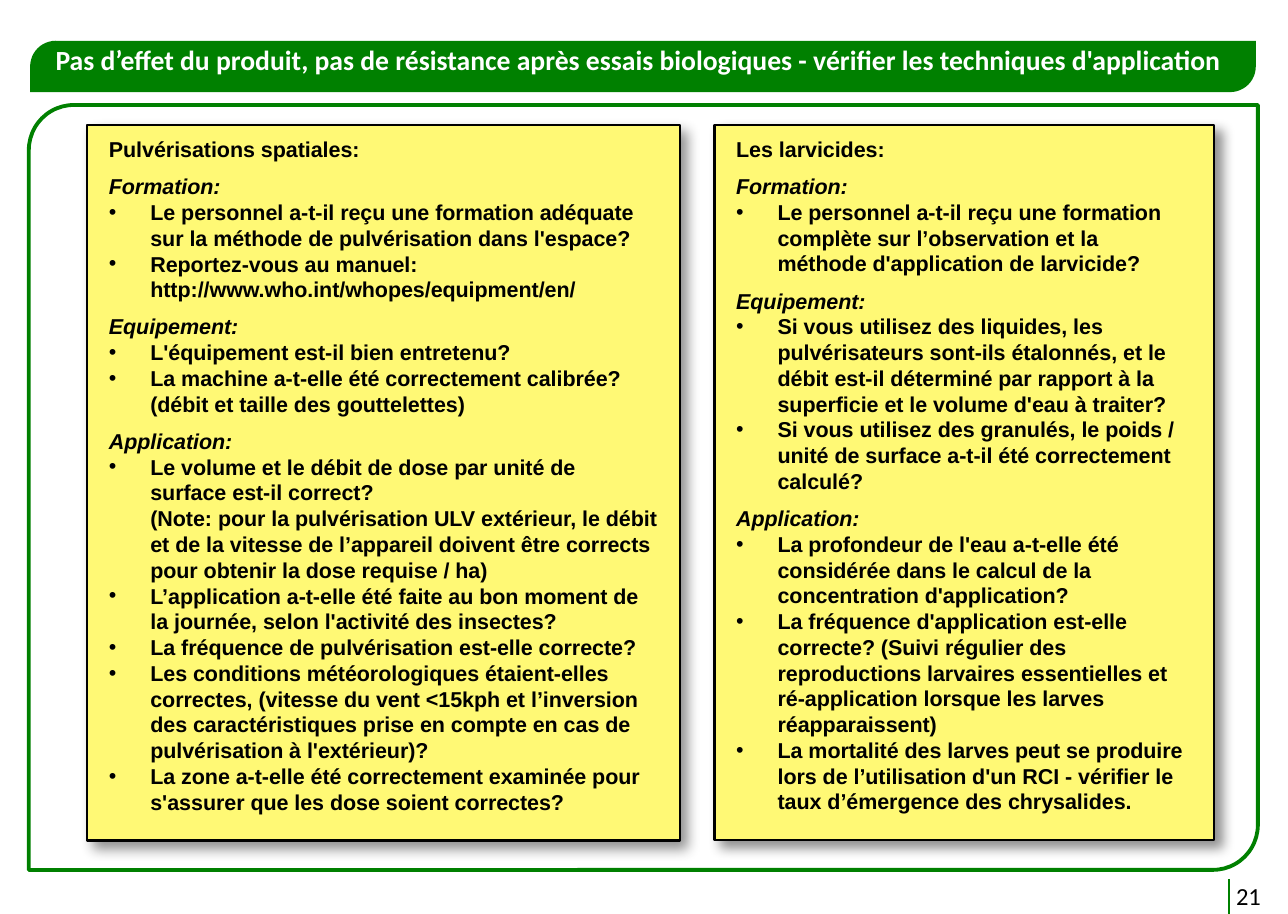
from dataclasses import dataclass

import lxml.etree
import pptx
import pptx.dml.color
import pptx.enum.shapes
import pptx.enum.text
import pptx.oxml
import pptx.oxml.ns
import pptx.util

Pt = pptx.util.Pt
Shapes = pptx.enum.shapes.MSO_SHAPE
qn = pptx.oxml.ns.qn


def rgb(code):
    return pptx.dml.color.RGBColor.from_string(code)


@dataclass(frozen=True)
class Theme:
    green = rgb("008000")
    yellow = rgb("FFF975")
    black = rgb("000000")
    white = rgb("FFFFFF")
    heading_font = "Calibri"
    body_font = "Arial"
    title_size = Pt(9)
    body_size = Pt(7)
    number_size = Pt(8)
    thin = Pt(0.75)
    thick = Pt(1.25)
    section_gap = Pt(3.7)
    bullet_indent = Pt(13.5)


THEME = Theme()

TITLE = "Pas d’effet du produit, pas de résistance après essais biologiques - vérifier les techniques d'application"

SPRAYING = ("Pulvérisations spatiales:", {
    "Formation:": [
        "Le personnel a-t-il reçu une formation adéquate sur la méthode de pulvérisation dans l'espace?",
        "Reportez-vous au manuel:\vhttp://www.who.int/whopes/equipment/en/",
    ],
    "Equipement:": [
        "L'équipement est-il bien entretenu?",
        "La machine a-t-elle été correctement calibrée? (débit et taille des gouttelettes)",
    ],
    "Application:": [
        "Le volume et le débit de dose par unité de\vsurface est-il correct?\v"
        "(Note: pour la pulvérisation ULV extérieur, le débit et de la vitesse de l’appareil "
        "doivent être corrects pour obtenir la dose requise / ha)",
        "L’application a-t-elle été faite au bon moment de la journée, selon l'activité des insectes?",
        "La fréquence de pulvérisation est-elle correcte?",
        "Les conditions météorologiques étaient-elles correctes, (vitesse du vent <15kph et l’inversion "
        "des caractéristiques prise en compte en cas de pulvérisation à l'extérieur)?",
        "La zone a-t-elle été correctement examinée pour s'assurer que les dose soient correctes?",
    ],
})

LARVICIDES = ("Les larvicides:", {
    "Formation:": [
        "Le personnel a-t-il reçu une formation complète sur l’observation et la méthode "
        "d'application de larvicide?",
    ],
    "Equipement:": [
        "Si vous utilisez des liquides, les pulvérisateurs sont-ils étalonnés, et le débit est-il "
        "déterminé par rapport à la superficie et le volume d'eau à traiter?",
        "Si vous utilisez des granulés, le poids / unité de surface a-t-il été correctement calculé?",
    ],
    "Application:": [
        "La profondeur de l'eau a-t-elle été considérée dans le calcul de la concentration d'application?",
        "La fréquence d'application est-elle correcte? (Suivi régulier des reproductions larvaires "
        "essentielles et ré-application lorsque les larves réapparaissent)",
        "La mortalité des larves peut se produire lors de l’utilisation d'un RCI - vérifier le taux "
        "d’émergence des chrysalides.",
    ],
})


def add_block(slide, kind, left, top, width, height, fill=None, line=None, weight=None):
    """Add a flat preset shape with optional fill and outline."""
    block = slide.shapes.add_shape(kind, Pt(left), Pt(top), Pt(width), Pt(height))
    block.shadow.inherit = False
    if fill is None:
        block.fill.background()
    else:
        block.fill.solid()
        block.fill.fore_color.rgb = fill
    if line is None:
        block.line.fill.background()
    else:
        block.line.color.rgb = line
        block.line.width = weight
    return block


def add_rounded(slide, left, top, width, height, rounding, **paint):
    block = add_block(slide, Shapes.ROUND_2_DIAG_RECTANGLE, left, top, width, height, **paint)
    block.adjustments[0] = rounding
    block.adjustments[1] = 0


def cast_shadow(block):
    effects = block._element.spPr.find(qn("a:effectLst"))
    shadow = lxml.etree.SubElement(
        effects, qn("a:outerShdw"), blurRad=str(Pt(4)), dist=str(Pt(3)),
        dir="2700000", algn="tl", rotWithShape="0")
    color = lxml.etree.SubElement(shadow, qn("a:srgbClr"), val=str(THEME.black))
    lxml.etree.SubElement(color, qn("a:alpha"), val="43000")


def style(paragraph, font, size, color, bold=False, italic=False):
    paragraph.font.name = font
    paragraph.font.size = size
    paragraph.font.color.rgb = color
    paragraph.font.bold = bold
    paragraph.font.italic = italic


def add_bullet(paragraph):
    properties = paragraph._p.get_or_add_pPr()
    properties.set("marL", str(THEME.bullet_indent))
    properties.set("indent", str(-THEME.bullet_indent))
    lxml.etree.SubElement(properties, qn("a:buFont"), typeface=THEME.body_font)
    lxml.etree.SubElement(properties, qn("a:buChar"), char="•")


def add_checklist(slide, checklist, left, top, width, height):
    heading, sections = checklist
    panel = add_block(slide, Shapes.RECTANGLE, left, top, width, height,
                      fill=THEME.yellow, line=THEME.black, weight=THEME.thin)
    cast_shadow(panel)
    frame = panel.text_frame
    frame.word_wrap = True
    frame.vertical_anchor = pptx.enum.text.MSO_ANCHOR.TOP

    def write(paragraph, text, italic=False):
        paragraph.text = text
        paragraph.alignment = pptx.enum.text.PP_ALIGN.LEFT
        style(paragraph, THEME.body_font, THEME.body_size, THEME.black, bold=True, italic=italic)

    write(frame.paragraphs[0], heading)
    for section, questions in sections.items():
        label = frame.add_paragraph()
        label.space_before = THEME.section_gap
        write(label, section, italic=True)
        for question in questions:
            entry = frame.add_paragraph()
            add_bullet(entry)
            write(entry, question)


def add_label(slide, text, left, top, width, height, size, color, bold=False, wrap=True):
    label = slide.shapes.add_textbox(Pt(left), Pt(top), Pt(width), Pt(height))
    label.text_frame.word_wrap = wrap
    paragraph = label.text_frame.paragraphs[0]
    paragraph.text = text
    style(paragraph, THEME.heading_font, size, color, bold=bold)


def add_rule(slide, x, top, bottom):
    rule = slide.shapes.add_connector(
        pptx.enum.shapes.MSO_CONNECTOR.STRAIGHT, Pt(x), Pt(top), Pt(x), Pt(bottom))
    rule.line.color.rgb = THEME.green
    rule.line.width = THEME.thin
    lxml.etree.SubElement(rule._element.spPr, qn("a:effectLst"))


def main():
    deck = pptx.Presentation()
    deck.slide_width, deck.slide_height = Pt(419.5), Pt(297.63)
    slide = deck.slides.add_slide(deck.slide_layouts[6])

    add_rounded(slide, 9.8, 13.3, 399.2, 16.7, 0.5, fill=THEME.green)
    add_rounded(slide, 9.4, 34.2, 400.3, 249.1, 0.059, line=THEME.green, weight=THEME.thick)
    add_label(slide, TITLE, 11, 10.5, 408.5, 18, THEME.title_size, THEME.white, bold=True)

    add_checklist(slide, SPRAYING, 28.4, 40.8, 193, 233)
    add_checklist(slide, LARVICIDES, 232.7, 40.7, 162.8, 232.8)

    add_label(slide, "21", 395.5, 283.2, 23, 17, THEME.number_size, THEME.black, wrap=False)
    add_rule(slide, 400.3, 286.2, 297.6)
    deck.save("out.pptx")


if __name__ == "__main__":
    main()
